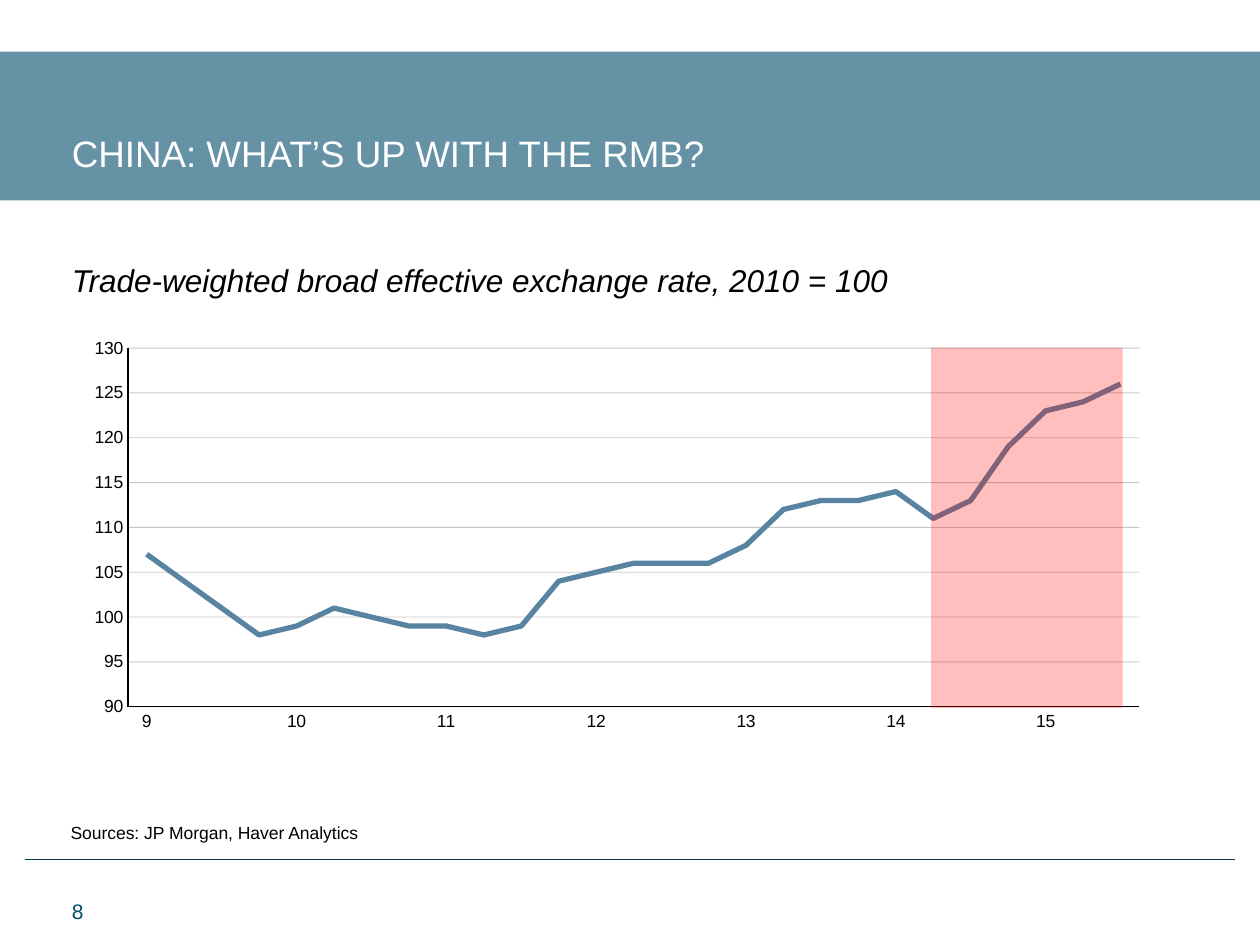
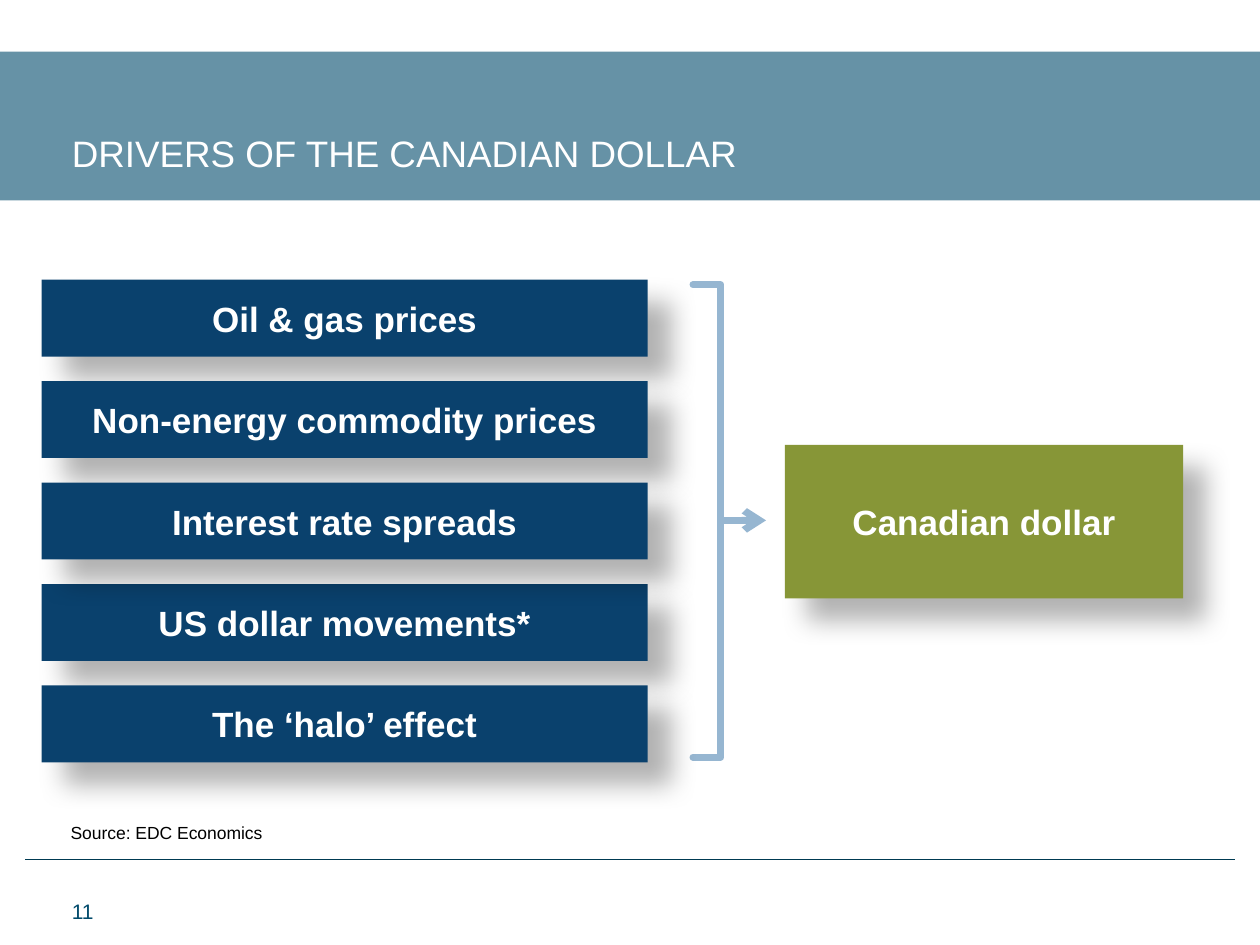
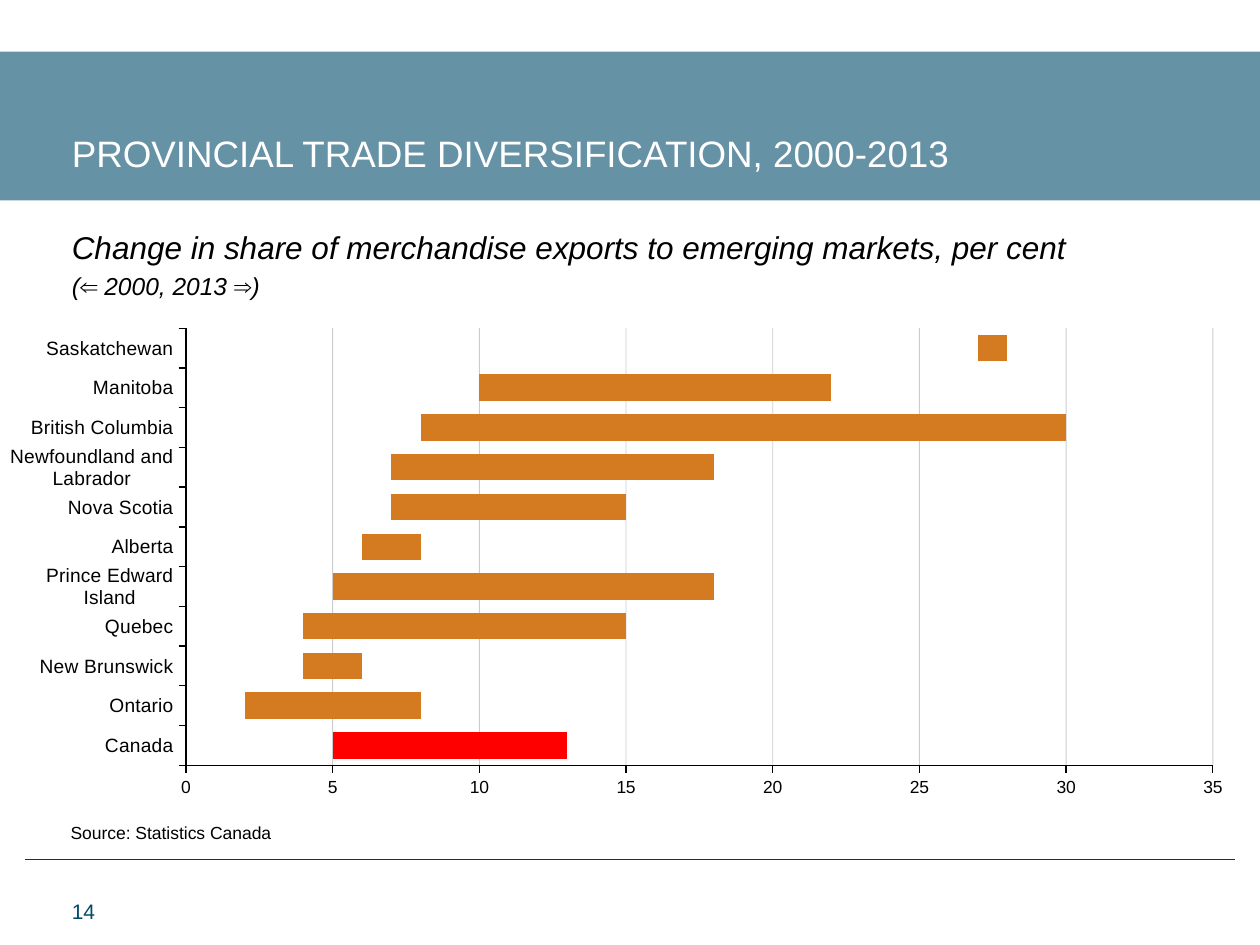
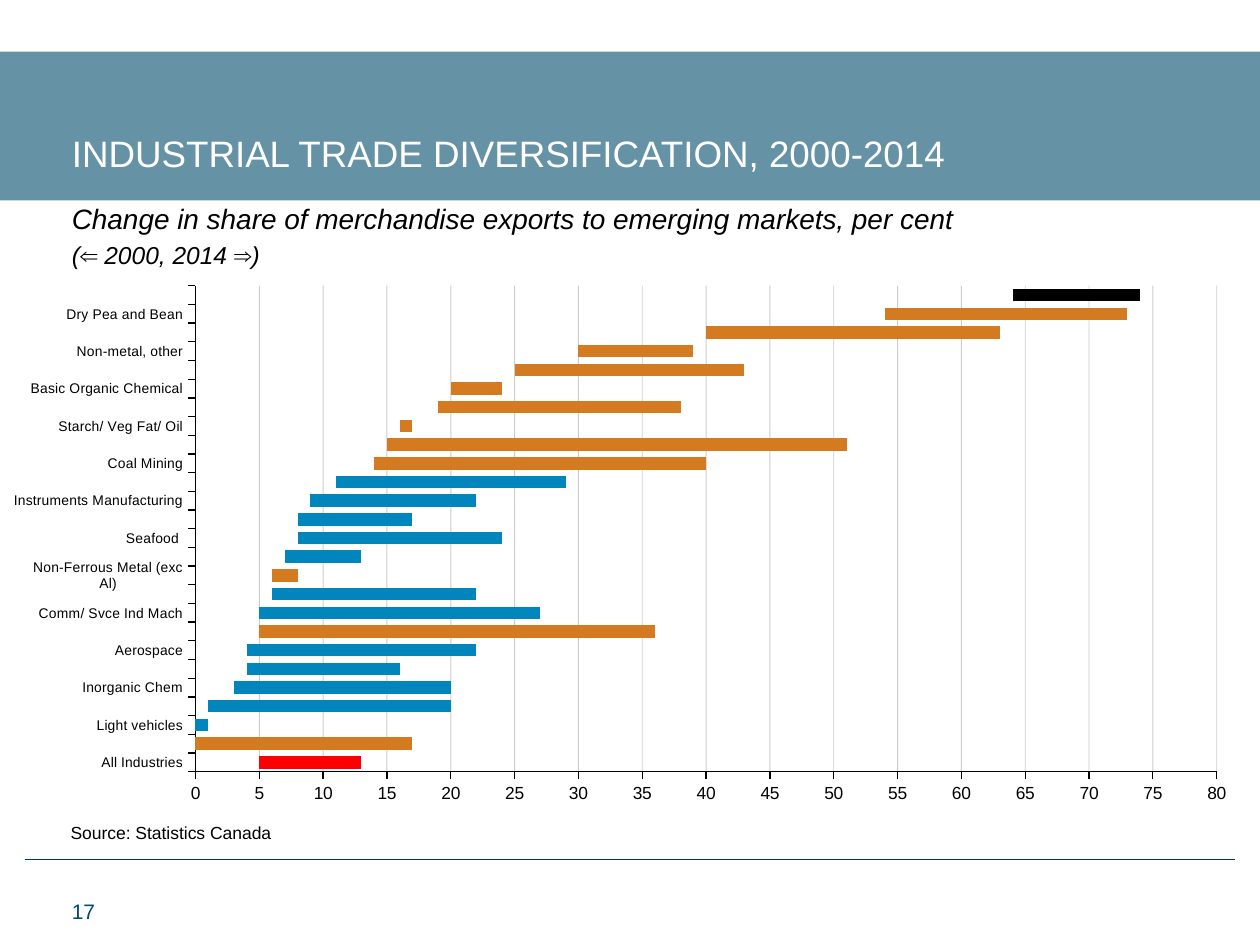
from lxml import etree
from pptx import Presentation
from pptx.chart.data import CategoryChartData
from pptx.dml.color import RGBColor
from pptx.enum.chart import (
    XL_CHART_TYPE, XL_MARKER_STYLE, XL_TICK_LABEL_POSITION, XL_TICK_MARK)
from pptx.enum.shapes import MSO_CONNECTOR, MSO_SHAPE
from pptx.enum.text import MSO_ANCHOR, MSO_AUTO_SIZE, PP_ALIGN
from pptx.oxml import parse_xml
from pptx.oxml.ns import nsdecls, qn
from pptx.util import Inches, Pt

RECTANGLE = MSO_SHAPE.RECTANGLE
STRAIGHT, ELBOW = MSO_CONNECTOR.STRAIGHT, MSO_CONNECTOR.ELBOW
LEFT, CENTER = PP_ALIGN.LEFT, PP_ALIGN.CENTER
TOP, MIDDLE = MSO_ANCHOR.TOP, MSO_ANCHOR.MIDDLE
NO_FIT, GROW = MSO_AUTO_SIZE.NONE, MSO_AUTO_SIZE.SHAPE_TO_FIT_TEXT
LINE, STACKED = XL_CHART_TYPE.LINE, XL_CHART_TYPE.BAR_STACKED
TICK_NONE, TICK_OUT = XL_TICK_MARK.NONE, XL_TICK_MARK.OUTSIDE
LABELS_LOW = XL_TICK_LABEL_POSITION.LOW
NO_MARKER = XL_MARKER_STYLE.NONE

FONT = "Arial"
HEX = {
    "band": "6692A6", "rule": "003A52", "page": "004A6B", "black": "000000",
    "white": "FFFFFF", "grey": "717073", "rate": "5884A1", "red": "FF0000",
    "driver": "0A416D", "bracket": "96B6D1", "result": "879637",
    "orange": "D47B22", "blue": "0086BD",
}
COLOR = {name: RGBColor.from_string(value) for name, value in HEX.items()}


def write(shape, lines, color, align=LEFT, anchor=TOP, insets=(0, 0, 0, 0),
          fit=NO_FIT, after=0, bold=None, italic=None):
    """Fill a shape with (text, size) paragraphs."""
    frame = shape.text_frame
    frame.word_wrap, frame.auto_size, frame.vertical_anchor = True, fit, anchor
    (frame.margin_left, frame.margin_top,
     frame.margin_right, frame.margin_bottom) = map(Inches, insets)
    for i, (text, size) in enumerate(lines):
        paragraph = frame.add_paragraph() if i else frame.paragraphs[0]
        paragraph.text, paragraph.alignment = text, align
        paragraph.space_after = Pt(after)
        font = paragraph.font
        font.name, font.size, font.color.rgb = FONT, Pt(size), COLOR[color]
        font.bold, font.italic = bold, italic


def set_alpha(element, percent):
    """Make the colours inside an element partly transparent."""
    for color in element.iter(qn("a:srgbClr")):
        etree.SubElement(color, qn("a:alpha"), val=str(percent * 1000))


prs = Presentation()
prs.slide_width, prs.slide_height = Inches(10), Inches(7.5)
layout = prs.slide_layouts[5]

# Titles, page numbers, sources; subtitles as (top, width, space after, lines)
PAGES = [
    ("CHINA: WHAT’S UP WITH THE RMB?", "8", "Sources: JP Morgan, Haver Analytics",
     (2.07, 6.82, 9,
      [("Trade-weighted broad effective exchange rate, 2010 = 100", 18)])),
    ("DRIVERS OF THE CANADIAN DOLLAR", "11", "Source: EDC Economics", None),
    ("PROVINCIAL TRADE DIVERSIFICATION, 2000-2013", "14",
     "Source: Statistics Canada",
     (1.81, 8.87, 3,
      [("Change in share of merchandise exports to emerging markets, per cent", 18),
       ("(⇐ 2000, 2013 ⇒)", 14)])),
    ("INDUSTRIAL TRADE DIVERSIFICATION, 2000-2014", "17",
     "Source: Statistics Canada",
     (1.6, 8.87, 3,
      [("Change in share of merchandise exports to emerging markets, per cent", 16),
       ("(⇐ 2000, 2014 ⇒)", 14)])),
]
slides = [prs.slides.add_slide(layout) for page in PAGES]

# Title band and footer rule, drawn once and moved to the layout
band = slides[0].shapes.add_shape(RECTANGLE, 0, Inches(0.41), Inches(10), Inches(1.18))
band.shadow.inherit = False
band.fill.solid()
band.fill.fore_color.rgb = COLOR["band"]
band.line.fill.background()
rule = slides[0].shapes.add_connector(
    STRAIGHT, Inches(0.2), Inches(6.82), Inches(9.8), Inches(6.82))
rule.line.color.rgb, rule.line.width = COLOR["rule"], Pt(0.5)
etree.SubElement(rule._element.spPr, qn("a:effectLst"))
for position, part in enumerate((band, rule), start=2):
    layout.shapes._spTree.insert(position, part._element)

# Charts
PROVINCES = [  # name, share in 2000, change
    ("Canada", 5, 8), ("Ontario", 2, 6), ("New Brunswick", 4, 2),
    ("Quebec", 4, 11), ("Prince Edward Island", 5, 13), ("Alberta", 6, 2),
    ("Nova Scotia", 7, 8), ("Newfoundland and Labrador", 7, 11),
    ("British Columbia", 8, 22), ("Manitoba", 10, 12), ("Saskatchewan", 27, 1),
]
INDUSTRIES = [
    ("All Industries", 5, 8), ("Gold and Silver Mining", 0, 17),
    ("Light vehicles", 0, 1), ("Sawmills", 1, 19), ("Inorganic Chem", 3, 17),
    ("Eng, Turb, Pwr Tran Equip", 4, 12), ("Aerospace", 4, 18),
    ("Iron Ore Mining", 5, 31), ("Comm/ Svce Ind Mach", 5, 22),
    ("Recyclable Metal", 6, 16), ("Non-Ferrous Metal (exc Al)", 6, 2),
    ("Resin/ Synthetic Rubber", 7, 6), ("Seafood ", 8, 16), ("Paper Mills", 8, 9),
    ("Instruments Manufacturing", 9, 13), ("Processed meat", 11, 18),
    ("Coal Mining", 14, 26), ("Pulp Mills", 15, 36),
    ("Starch/ Veg Fat/ Oil", 16, 1), ("Cu, Ni, Zn", 19, 19),
    ("Basic Organic Chemical", 20, 4), ("Mining/ O&G Field Machinery", 25, 18),
    ("Non-metal, other", 30, 9), ("Oilseed", 40, 23), ("Dry Pea and Bean", 54, 19),
    ("Wheat", 64, 10),
]
RATES = [107, 104, 101, 98, 99, 101, 100, 99, 99, 98, 99, 104, 105, 106, 106, 106,
         108, 112, 113, 113, 114, 111, 113, 119, 123, 124, 126]
QUARTERS = [str(9 + i // 4) if i % 4 == 0 else "" for i in range(len(RATES))]
BLUE_INDUSTRIES = (2, 3, 4, 5, 6, 8, 9, 11, 12, 13, 14, 15)
BAR_PLOT = (0.139, 0.053, 0.835, 0.857)

# slide, type, box, plot area, axis range, category size, grid alpha, rows, accents
CHARTS = [
    (slides[0], LINE, (0.47, 2.61, 9.1, 3.33), (0.06, 0.046, 0.882, 0.855),
     (90, 130), 10, 21, list(zip(QUARTERS, RATES)), {}),
    (slides[2], STACKED, (0.08, 2.39, 9.8, 4.05), BAR_PLOT,
     (0, 35), 11, 20, PROVINCES, {0: "red"}),
    (slides[3], STACKED, (0.11, 2.03, 9.8, 4.5), BAR_PLOT,
     (0, 80), 8, 20, INDUSTRIES,
     {0: "red", **dict.fromkeys(BLUE_INDUSTRIES, "blue"), 25: "black"}),
]
for slide, kind, box, area, limits, label_size, grid_alpha, rows, accents in CHARTS:
    names, *columns = zip(*rows)
    data = CategoryChartData()
    data.categories = names
    for number, values in enumerate(columns, start=1):
        data.add_series(f"Series {number}", values)
    chart = slide.shapes.add_chart(kind, *map(Inches, box), data).chart
    chart.has_title = chart.has_legend = False
    chart.font.name, chart.font.size = FONT, Pt(18)
    chart.font.color.rgb = COLOR["grey"]

    # Unlabelled categories hold no point
    for point in list(chart._chartSpace.iter(qn("c:pt"))):
        if not point.find(qn("c:v")).text:
            point.getparent().remove(point)

    # Inner plot area
    plot_area = chart._chartSpace.chart.plotArea
    for old_layout in plot_area.findall(qn("c:layout")):
        plot_area.remove(old_layout)
    sizes = "".join(f'<c:{tag} val="{value}"/>' for tag, value in zip("xywh", area))
    plot_area.insert(0, parse_xml(
        f'<c:layout {nsdecls("c")}><c:manualLayout><c:layoutTarget val="inner"/>'
        f'<c:xMode val="edge"/><c:yMode val="edge"/>{sizes}'
        '</c:manualLayout></c:layout>'))

    # Axes
    for axis, size in ((chart.category_axis, label_size), (chart.value_axis, 10)):
        axis.major_tick_mark = TICK_NONE if kind == LINE else TICK_OUT
        axis.minor_tick_mark = TICK_NONE
        axis.format.line.color.rgb = COLOR["black"]
        axis.format.line.width = Pt(0.75)
        axis.tick_labels.font.name = FONT
        axis.tick_labels.font.size = Pt(size)
        axis.tick_labels.font.color.rgb = COLOR["black"]
    chart.category_axis.has_major_gridlines = False
    value_axis = chart.value_axis
    value_axis.minimum_scale, value_axis.maximum_scale = limits
    value_axis.major_unit = 5
    value_axis.tick_labels.number_format = "0"
    value_axis.tick_labels.number_format_is_linked = False
    value_axis.has_major_gridlines = True
    grid = value_axis.major_gridlines.format.line
    grid.color.rgb, grid.width = COLOR["black"], Pt(0.5)
    set_alpha(value_axis.major_gridlines._xAx.find(qn("c:majorGridlines")), grid_alpha)

    # Series
    plot = chart.plots[0]
    plot.vary_by_categories = False
    if kind == LINE:
        rate = plot.series[0]
        rate.smooth = False
        rate.marker.style = NO_MARKER
        rate.format.line.color.rgb, rate.format.line.width = COLOR["rate"], Pt(3)
    else:
        plot.gap_width, plot.overlap = 50, 100
        chart.category_axis.tick_label_position = LABELS_LOW
        start, change = plot.series
        start.format.fill.background()
        change.invert_if_negative = False
        change.format.fill.solid()
        change.format.fill.fore_color.rgb = COLOR["orange"]
        for index, accent in accents.items():
            fill = change.points[index].format.fill
            fill.solid()
            fill.fore_color.rgb = COLOR[accent]

# Title, subtitle, source and page number
for slide, (title_text, page, source_text, subtitle_parts) in zip(slides, PAGES):
    title = slide.shapes.title
    title.left, title.top, title.width, title.height = map(Inches, (0.57, 1.04, 9, 0.52))
    write(title, [(title_text, 21)], "white")
    if subtitle_parts:
        top, width, after, lines = subtitle_parts
        subtitle = slide.shapes.add_textbox(*map(Inches, (0.57, top, width, 0.8)))
        write(subtitle, lines, "black", after=after, italic=True)
    source = slide.shapes.add_textbox(*map(Inches, (0.56, 6.44, 3.75, 0.38)))
    write(source, [(source_text, 10)], "black", insets=(0, 0.1, 0, 0.1),
          fit=GROW, after=12)
    page_number = slide.shapes.add_textbox(*map(Inches, (0.57, 7.03, 1.86, 0.4)))
    write(page_number, [(page, 12)], "page", anchor=MIDDLE,
          insets=(0, 0.05, 0.1, 0.05))

# Slide 1: recent appreciation
recent_rise = slides[0].shapes.add_shape(
    RECTANGLE, *map(Inches, (7.39, 2.76, 1.52, 2.86)))
recent_rise.shadow.inherit = False
recent_rise.fill.solid()
recent_rise.fill.fore_color.rgb = COLOR["red"]
recent_rise.line.fill.background()
set_alpha(recent_rise._element.spPr, 25)

# Slide 2: bracket from the drivers to the result
drivers = slides[1].shapes
for x1, y1, x2, y2, style in ((5.72, 4.13, 6.08, 4.13, STRAIGHT),
                              (5.5, 6.01, 5.72, 4.13, ELBOW),
                              (5.5, 2.26, 5.72, 4.13, ELBOW)):
    arm = drivers.add_connector(style, *map(Inches, (x1, y1, x2, y2)))
    arm.line.color.rgb, arm.line.width = COLOR["bracket"], Pt(4)
    outline = arm.line._get_or_add_ln()
    if style == STRAIGHT:
        etree.SubElement(outline, qn("a:tailEnd"), type="arrow")
    else:
        outline.set("cap", "rnd")
        bend = next(arm._element.iter(qn("a:avLst")))
        etree.SubElement(bend, qn("a:gd"), name="adj1", fmla="val 100000")
    etree.SubElement(arm._element.spPr, qn("a:effectLst"))

# Slide 2: boxes, the lower two drivers at the back
DRIVERS = ["Oil & gas prices", "Non-energy commodity prices",
           "Interest rate spreads", "US dollar movements*", "The ‘halo’ effect"]
boxes = [(DRIVERS[row], "driver", (0.33, 2.22 + 0.805 * row, 4.81, 0.61))
         for row in (3, 4, 0, 1, 2)]
boxes.append(("Canadian dollar", "result", (6.23, 3.53, 3.16, 1.22)))
for label, color, place in boxes:
    box = drivers.add_shape(RECTANGLE, *map(Inches, place))
    box.fill.solid()
    box.fill.fore_color.rgb = COLOR[color]
    box.line.fill.background()
    write(box, [(label, 20)], "white", CENTER, MIDDLE, (0.1, 0.05, 0.1, 0.05), bold=True)
    box.shadow.inherit = False
    effects = box._element.spPr.find(qn("a:effectLst"))
    shadow = etree.SubElement(
        effects, qn("a:outerShdw"), blurRad=str(Pt(15)), dist=str(Pt(18)),
        dir=str(45 * 60000), algn="tl", rotWithShape="0")
    etree.SubElement(shadow, qn("a:srgbClr"), val=HEX["black"])
    set_alpha(shadow, 30)

prs.save("out.pptx")
